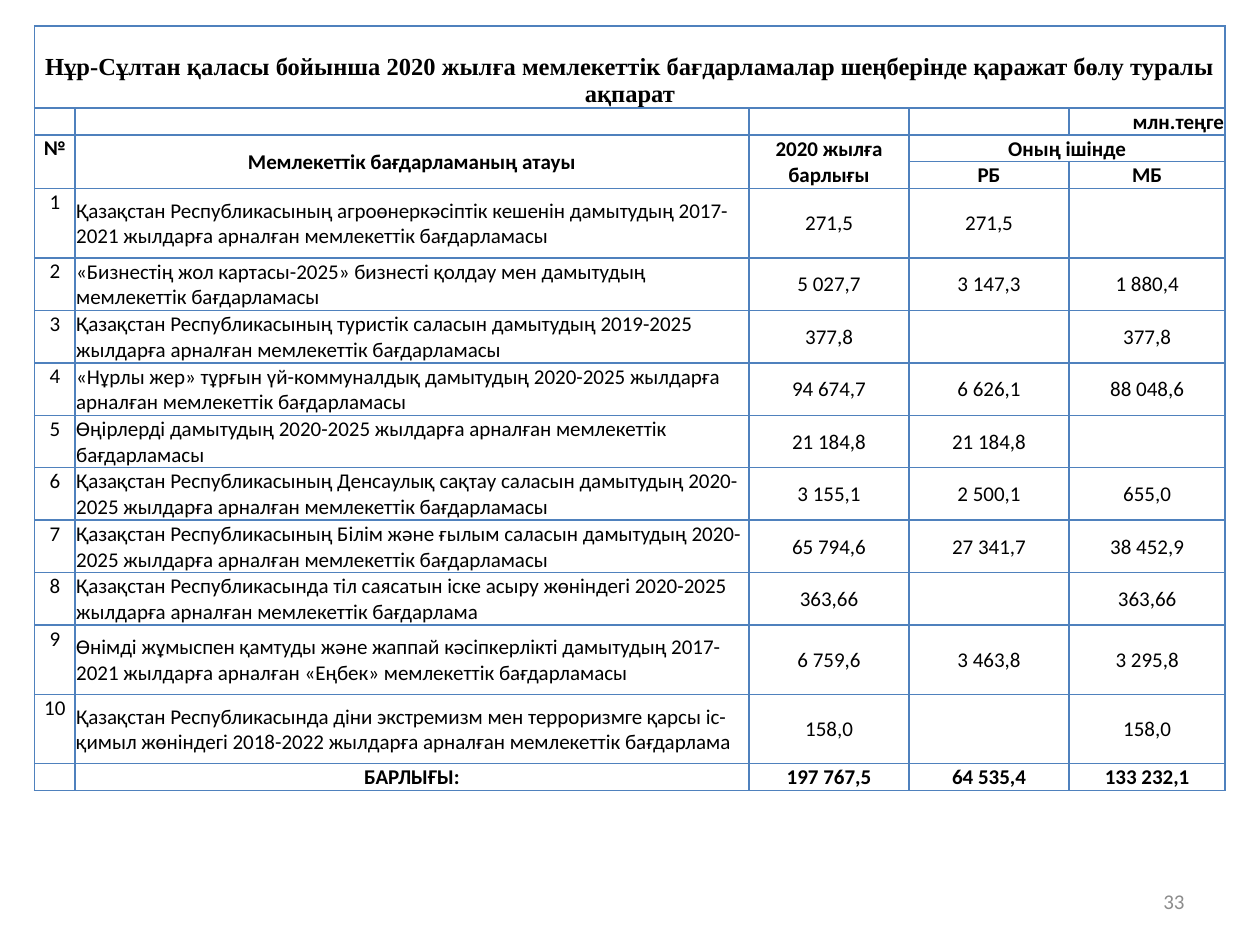
import pptx
import pptx.util
import pptx.dml.color
import pptx.enum.text
import pptx.oxml.ns
import lxml.etree

Inch, Pt = pptx.util.Inches, pptx.util.Pt
Color = pptx.dml.color.RGBColor
Align = pptx.enum.text.PP_ALIGN
Anchor = pptx.enum.text.MSO_ANCHOR
qn = pptx.oxml.ns.qn

BLACK = Color(0x00, 0x00, 0x00)
BLUE = Color(0x4F, 0x81, 0xBD)
GRAY = Color(0x8C, 0x8C, 0x8C)

deck = pptx.Presentation()
deck.slide_width, deck.slide_height = Inch(10), Inch(7.5)
slide = deck.slides.add_slide(deck.slide_layouts[6])


def wide(share):
    """Percent of the slide's width."""
    return int(deck.slide_width * share / 100)


def high(share):
    """Percent of the slide's height."""
    return int(deck.slide_height * share / 100)


# Wording: title, unit, two header rows, programmes, total
rows = [
    ["Нұр-Сұлтан қаласы бойынша 2020 жылға мемлекеттік бағдарламалар шеңберінде қаражат бөлу туралы ақпарат",
     "", "", "", ""],
    ["", "", "", "", "млн.теңге"],
    ["№", "Мемлекеттік бағдарламаның атауы", "2020 жылға барлығы", "Оның ішінде", ""],
    ["", "", "", "РБ", "МБ"],
]
plans = [
    ("Қазақстан Республикасының агроөнеркәсіптік кешенін дамытудың 2017-2021 жылдарға арналған мемлекеттік бағдарламасы",
     "271,5", "271,5", ""),
    ("«Бизнестің жол картасы-2025» бизнесті қолдау мен дамытудың мемлекеттік бағдарламасы",
     "5 027,7", "3 147,3", "1 880,4"),
    ("Қазақстан Республикасының туристік саласын дамытудың 2019-2025 жылдарға арналған мемлекеттік бағдарламасы",
     "377,8", "", "377,8"),
    ("«Нұрлы жер» тұрғын үй-коммуналдық дамытудың 2020-2025 жылдарға арналған мемлекеттік бағдарламасы",
     "94 674,7", "6 626,1", "88 048,6"),
    ("Өңірлерді дамытудың 2020-2025 жылдарға арналған мемлекеттік бағдарламасы",
     "21 184,8", "21 184,8", ""),
    ("Қазақстан Республикасының Денсаулық сақтау саласын дамытудың 2020-2025 жылдарға арналған мемлекеттік бағдарламасы",
     "3 155,1", "2 500,1", "655,0"),
    ("Қазақстан Республикасының Білім және ғылым саласын дамытудың 2020-2025 жылдарға арналған мемлекеттік бағдарламасы",
     "65 794,6", "27 341,7", "38 452,9"),
    ("Қазақстан Республикасында тіл саясатын іске асыру жөніндегі 2020-2025 жылдарға арналған мемлекеттік бағдарлама",
     "363,66", "", "363,66"),
    ("Өнімді жұмыспен қамтуды және жаппай кәсіпкерлікті дамытудың 2017-2021 жылдарға арналған «Еңбек» мемлекеттік бағдарламасы",
     "6 759,6", "3 463,8", "3 295,8"),
    ("Қазақстан Республикасында діни экстремизм мен терроризмге қарсы іс-қимыл жөніндегі 2018-2022 жылдарға арналған мемлекеттік бағдарлама",
     "158,0", "", "158,0"),
]
rows += [[str(num), *plan] for num, plan in enumerate(plans, 1)]
rows.append(["", "БАРЛЫҒЫ:", "197 767,5", "64 535,4", "133 232,1"])
last = len(rows) - 1

# Table grid, in percent of the slide
widths = [3.2, 53.5, 12.7, 12.7, 12.4]
heights = [8.67, 2.27, 2.4, 2.4, 7.33, 4.93, 4.93, 5.33,
           4.93, 4.67, 4.93, 4.93, 7.33, 7.33, 2.4]
table = slide.shapes.add_table(
    len(rows), len(widths), wide(2.75), high(2.75),
    wide(sum(widths)), high(sum(heights))).table
table.first_row = table.horz_banding = False
for col, share in zip(table.columns, widths):
    col.width = wide(share)
for row, share in zip(table.rows, heights):
    row.height = high(share)

# Merged cells: title, three tall headers, one wide header
for top, left, end, right in [(0, 0, 0, 4), (2, 0, 3, 0), (2, 1, 3, 1),
                              (2, 2, 3, 2), (2, 3, 2, 4)]:
    table.cell(top, left).merge(table.cell(end, right))

# Cell text, fill and borders
low = {(0, 0), (1, 4), (2, 3)}
inset = {"margin_left": Inch(0.01), "margin_right": Inch(0.01),
         "margin_top": Inch(0.01), "margin_bottom": 0}
for r, words in enumerate(rows):
    for c, word in enumerate(words):
        cell = table.cell(r, c)
        for key, val in inset.items():
            setattr(cell, key, val)
        if r == last or (r, c) in low:
            cell.vertical_anchor = Anchor.BOTTOM
        else:
            cell.vertical_anchor = Anchor.TOP if c == 0 else Anchor.MIDDLE
        size = 14 if r == 0 else 12
        para = cell.text_frame.paragraphs[0]
        para.alignment = Align.CENTER
        if r == 1:
            para.alignment = Align.RIGHT
        elif c == 1 and 4 <= r < last:
            para.alignment = Align.LEFT
        if word:
            run = para.add_run()
            run.text = word
            run.font.color.rgb = BLACK
            look = {"name": "Times New Roman" if r == 0 else "Calibri",
                    "size": Pt(size), "bold": r < 4 or r == last}
            for key, val in look.items():
                setattr(run.font, key, val)
        # The end mark keeps empty cells as low as filled ones
        lxml.etree.SubElement(para._p, qn("a:endParaRPr"), sz=str(size * 100))

        cell.fill.background()
        props = cell._tc.get_or_add_tcPr()
        for spot, side in enumerate(["lnL", "lnR", "lnT", "lnB"]):
            line = lxml.etree.Element(qn("a:" + side), w=str(Pt(1)))
            fill = lxml.etree.SubElement(line, qn("a:solidFill"))
            lxml.etree.SubElement(fill, qn("a:srgbClr"), val=str(BLUE))
            props.insert(spot, line)

# Page number
page = slide.shapes.add_textbox(wide(71.7), high(92.67), wide(23.3), high(5.33))
frame = page.text_frame
frame.word_wrap = True
frame.vertical_anchor = Anchor.MIDDLE
para = frame.paragraphs[0]
para.alignment = Align.RIGHT
run = para.add_run()
run.text = "33"
run.font.color.rgb = GRAY
for key, val in {"name": "Calibri", "size": Pt(12)}.items():
    setattr(run.font, key, val)

deck.save("out.pptx")
